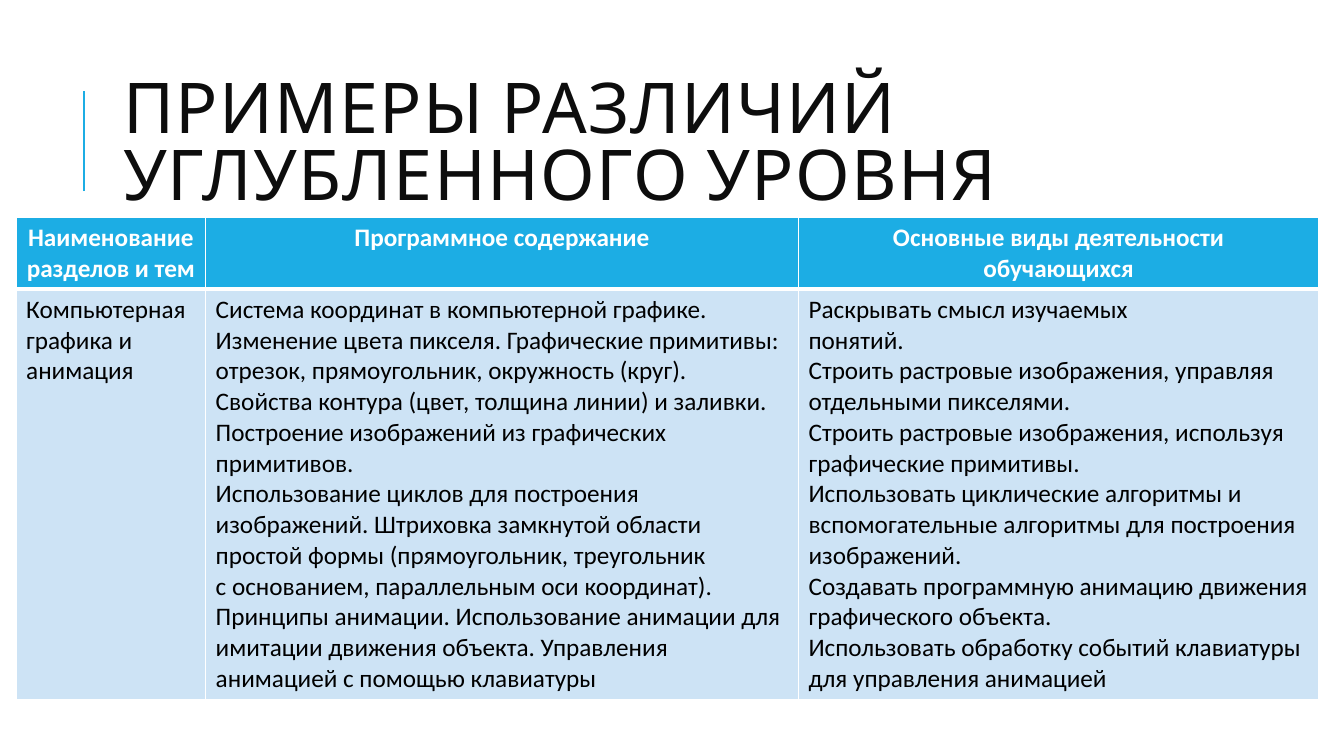
"""Build a slide that compares the contents of an advanced course in a table."""
from lxml import etree
from pptx import Presentation
from pptx import util as u
from pptx.dml.color import RGBColor
from pptx.enum import shapes, text
from pptx.oxml import ns

WIDE, HIGH = u.Inches(13.33), u.Inches(7.5)
BLUE = RGBColor(0x1C, 0xAD, 0xE4)
PALE = RGBColor(0xCD, 0xE3, 0xF5)
WHITE = RGBColor(0xFF, 0xFF, 0xFF)
BLACK = RGBColor(0, 0, 0)
INK = RGBColor(0x0D, 0x0D, 0x0D)
COLS = (1.88, 5.88, 5.16)
ROWS = (0.7, 4.0)

TITLE = "ПРИМЕРЫ РАЗЛИЧИЙ УГЛУБЛЕННОГО УРОВНЯ"
HEADS = (
    "Наименование\nразделов и тем",
    "Программное содержание",
    "Основные виды деятельности\nобучающихся",
)
TOPIC = "Компьютерная графика и анимация"
CONTENT = "\n".join((
    "Система координат в компьютерной графике. Изменение цвета пикселя. "
    "Графические примитивы: отрезок, прямоугольник, окружность (круг).",
    "Свойства контура (цвет, толщина линии) и заливки. "
    "Построение изображений из графических примитивов.",
    "Использование циклов для построения изображений. Штриховка замкнутой "
    "области простой формы (прямоугольник, треугольник",
    "с основанием, параллельным оси координат).",
    "Принципы анимации. Использование анимации для имитации движения объекта. "
    "Управления анимацией с помощью клавиатуры",
))
TASKS = "\n".join((
    "Раскрывать смысл изучаемых",
    "понятий.",
    "Строить растровые изображения, управляя отдельными пикселями.",
    "Строить растровые изображения, используя графические примитивы.",
    "Использовать циклические алгоритмы и вспомогательные алгоритмы для построения",
    "изображений.",
    "Создавать программную анимацию движения графического объекта.",
    "Использовать обработку событий клавиатуры для управления анимацией",
))


def style(para, name, size, color, bold=False):
    """Set the font of a paragraph."""
    font = para.font
    font.name, font.size, font.bold = name, u.Pt(size), bold
    font.color.rgb = color


def add_title(slide):
    """Place and format the title."""
    title = slide.shapes.title
    title.left, title.top = u.Inches(1.12), u.Inches(0.64)
    title.width, title.height = u.Inches(10.63), u.Inches(1.64)
    frame = title.text_frame
    frame.text = TITLE
    frame.word_wrap = True
    frame.auto_size = text.MSO_AUTO_SIZE.NONE
    frame.vertical_anchor = text.MSO_ANCHOR.MIDDLE
    para = frame.paragraphs[0]
    para.alignment = text.PP_ALIGN.LEFT
    para.line_spacing = 0.8
    style(para, "Cabin", 50, INK)
    para.runs[0].font.bold = False
    para.runs[0]._r.get_or_add_rPr().set("spc", "100")


def add_rule(slide):
    """Draw the upright line beside the title."""
    left = u.Inches(0.83)
    rule = slide.shapes.add_connector(
        shapes.MSO_CONNECTOR.STRAIGHT, left, int(HIGH * 0.253), left, int(HIGH * 0.12))
    rule.line.color.rgb = BLUE
    rule.line.width = u.Pt(1.5)
    etree.SubElement(rule._element.spPr, ns.qn("a:effectLst"))


def edge(cell, base):
    """Draw white borders around a cell, with a given width at the base."""
    props = cell._tc.get_or_add_tcPr()
    for side, width in zip("LRTB", (1, 1, base if base == 1 else 1, base)):
        line = etree.SubElement(props, ns.qn("a:ln" + side), w=str(u.Pt(width)))
        fill = etree.SubElement(line, ns.qn("a:solidFill"))
        etree.SubElement(fill, ns.qn("a:srgbClr"), val=str(WHITE))


def fill_cell(cell, words, head):
    """Write and format one cell as a heading or as body text."""
    edge(cell, 3 if head else 1)
    cell.fill.solid()
    cell.fill.fore_color.rgb = BLUE if head else PALE
    cell.text = words
    for para in cell.text_frame.paragraphs:
        para.alignment = text.PP_ALIGN.CENTER if head else text.PP_ALIGN.LEFT
        style(para, "Calibri", 18, WHITE if head else BLACK, head)


def add_grid(slide):
    """Add the table of topics, contents and tasks."""
    grid = slide.shapes.add_table(
        len(ROWS), len(COLS), u.Inches(0.16), u.Inches(2.16),
        u.Inches(sum(COLS)), u.Inches(sum(ROWS))).table
    for col, width in zip(grid.columns, COLS):
        col.width = u.Inches(width)
    for row, height in zip(grid.rows, ROWS):
        row.height = u.Inches(height)
    for r, row in enumerate((HEADS, (TOPIC, CONTENT, TASKS))):
        for c, words in enumerate(row):
            fill_cell(grid.cell(r, c), words, r == 0)


def main():
    """Build and save the slide."""
    deck = Presentation()
    deck.slide_width, deck.slide_height = WIDE, HIGH
    slide = deck.slides.add_slide(deck.slide_layouts[5])
    add_rule(slide)
    add_title(slide)
    add_grid(slide)
    deck.save("out.pptx")


if __name__ == "__main__":
    main()
